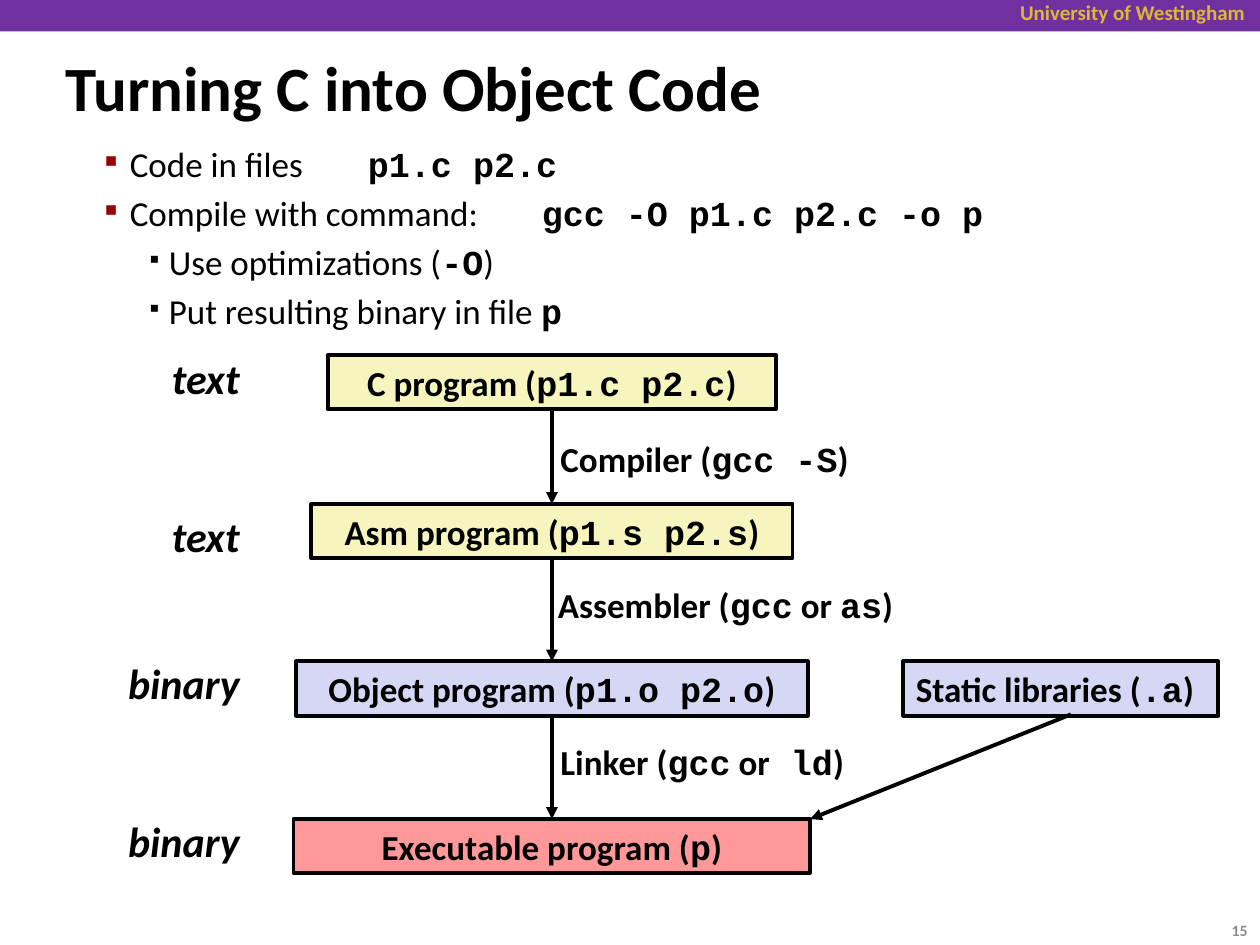
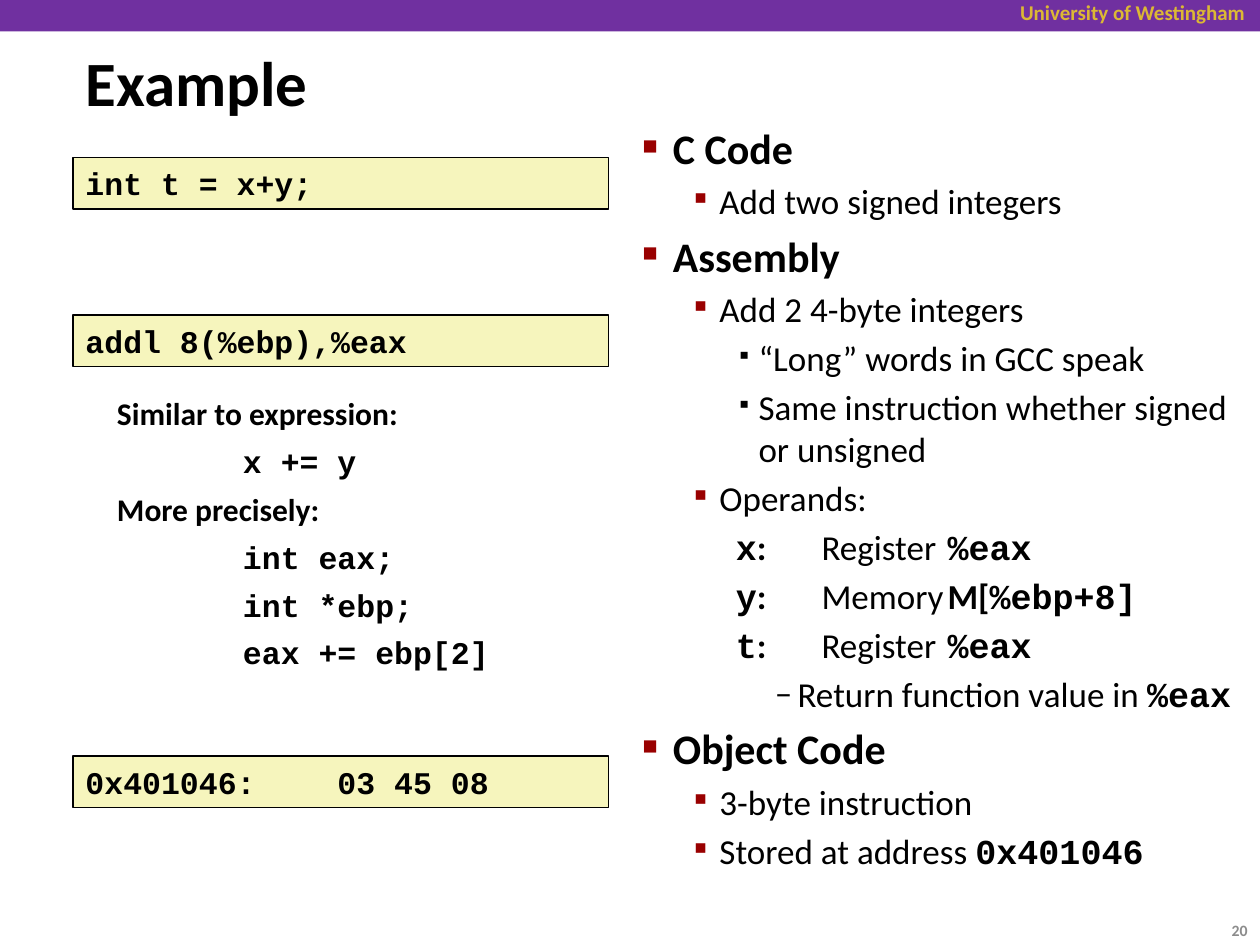
from dataclasses import dataclass

from lxml.etree import SubElement
from pptx import Presentation
from pptx.dml.color import RGBColor
from pptx.enum.shapes import MSO_CONNECTOR, MSO_SHAPE
from pptx.enum.text import MSO_ANCHOR, MSO_AUTO_SIZE, PP_ALIGN
from pptx.oxml.ns import qn
from pptx.util import Emu, Pt

EMU_PER_PX = 9144


@dataclass(frozen=True)
class Theme:
    sans: str = "Calibri"
    mono: str = "Courier New"
    ink: str = "000000"
    band: str = "7030A0"
    gold: str = "DCB834"
    bullet: str = "990000"
    muted: str = "8C8C8C"
    source: str = "F6F5BD"
    binary: str = "D6D6F5"
    executable: str = "FF9999"
    title: int = 36
    heading: int = 24
    text: int = 20
    code: int = 18
    header: int = 12
    number: int = 9


@dataclass(frozen=True)
class Level:
    size: int
    bold: bool
    margin: int
    hanging: int
    mark: str
    mark_color: str
    mark_percent: int
    mark_font: str


@dataclass(frozen=True)
class Span:
    text: str
    font: str
    bold: bool = True


THEME = Theme()
LEVELS = (
    Level(THEME.heading, True, 24, 24, "■", THEME.bullet, 60, THEME.mono),
    Level(THEME.text, False, 61, 24, "▪", THEME.bullet, 110, THEME.mono),
    Level(THEME.text, False, 92, 18, "▪", THEME.ink, 80, THEME.mono),
    Level(THEME.text, False, 123, 18, "–", THEME.ink, 100, THEME.sans),
)


def px(length):
    return Emu(length * EMU_PER_PX)


def rgb(color):
    return RGBColor.from_string(color)


def code(text):
    return Span(text, THEME.mono)


def strong(text):
    return Span(text, THEME.sans)


def write(paragraph, parts, size, bold=True, color=THEME.ink, italic=False, align=PP_ALIGN.LEFT):
    paragraph.alignment = align
    for part in parts:
        span = part if isinstance(part, Span) else Span(part, THEME.sans, bold)
        run = paragraph.add_run()
        run.text = span.text
        font = run.font
        font.name, font.size = span.font, Pt(size)
        font.bold, font.italic = span.bold, italic
        font.color.rgb = rgb(color)


def set_tabs(paragraph, stops):
    tab_list = SubElement(paragraph._p.get_or_add_pPr(), qn("a:tabLst"))
    for stop in stops:
        SubElement(tab_list, qn("a:tab"), pos=str(px(stop)), algn="l")


def set_bullet(paragraph, level, shown):
    properties = paragraph._p.get_or_add_pPr()
    properties.set("marL", str(px(level.margin)))
    properties.set("indent", str(-px(level.hanging)))
    if not shown:
        SubElement(properties, qn("a:buNone"))
        return
    mark_color = SubElement(properties, qn("a:buClr"))
    SubElement(mark_color, qn("a:srgbClr"), val=level.mark_color)
    SubElement(properties, qn("a:buSzPct"), val=str(level.mark_percent * 1000))
    SubElement(properties, qn("a:buFont"), typeface=level.mark_font)
    SubElement(properties, qn("a:buChar"), char=level.mark)


def place(element, left, top, width, height):
    element.left, element.top = px(left), px(top)
    element.width, element.height = px(width), px(height)


def add_label(slide, left, top, width, height, parts, size, **style):
    label = slide.shapes.add_textbox(px(left), px(top), px(width), px(height))
    label.text_frame.word_wrap = True
    write(label.text_frame.paragraphs[0], parts, size, **style)
    return label


def add_box(slide, left, top, width, height, fill, line_width=0):
    box = slide.shapes.add_shape(MSO_SHAPE.RECTANGLE, px(left), px(top), px(width), px(height))
    box.shadow.inherit = False
    box.fill.solid()
    box.fill.fore_color.rgb = rgb(fill)
    if line_width:
        box.line.color.rgb = rgb(THEME.ink)
        box.line.width = Pt(line_width)
    else:
        box.line.fill.background()
    return box


def add_stage(slide, left, top, width, fill, parts, align=PP_ALIGN.CENTER):
    stage = add_box(slide, left, top, width, 43, fill, 2.25)
    write(stage.text_frame.paragraphs[0], parts, THEME.text, align=align)
    return stage


def add_code_box(slide, top, line, tabs=()):
    box = add_box(slide, 58, top, 425, 41, THEME.source, 1)
    paragraph = box.text_frame.paragraphs[0]
    write(paragraph, [code(line)], THEME.code)
    if tabs:
        set_tabs(paragraph, tabs)


def add_arrow(slide, start=(0, 0), end=(0, 0)):
    arrow = slide.shapes.add_connector(
        MSO_CONNECTOR.STRAIGHT, *(px(value) for value in (*start, *end)))
    arrow.line.color.rgb = rgb(THEME.ink)
    arrow.line.width = Pt(2.25)
    SubElement(arrow.line._get_or_add_ln(), qn("a:tailEnd"), type="triangle")
    SubElement(arrow._element.spPr, qn("a:effectLst"))
    return arrow


def link_stages(slide, upper, lower):
    arrow = add_arrow(slide)
    arrow.begin_connect(upper, 2)
    arrow.end_connect(lower, 0)


def fill_outline(outline, items, tabs):
    frame = outline.text_frame
    frame.auto_size = MSO_AUTO_SIZE.NONE
    frame.text = "\n" * (len(items) - 1)
    for paragraph, (depth, parts, *plain) in zip(frame.paragraphs, items):
        level = LEVELS[depth]
        paragraph.level = depth
        paragraph.space_before = Pt(level.size * 0.2)
        write(paragraph, parts, level.size, level.bold)
        set_bullet(paragraph, level, not plain)
        set_tabs(paragraph, tabs)


def start_slide(deck, heading, title_area, number, outline_area, items, tabs):
    slide = deck.slides.add_slide(deck.slide_layouts[1])
    add_box(slide, 0, 0, 1000, 25, THEME.band)
    add_label(slide, 733, -5, 265, 30, ["University of Westingham"], THEME.header,
              color=THEME.gold, align=PP_ALIGN.RIGHT)
    title = slide.shapes.title
    place(title, *title_area)
    title.text_frame.auto_size = MSO_AUTO_SIZE.NONE
    title.text_frame.vertical_anchor = MSO_ANCHOR.MIDDLE
    write(title.text_frame.paragraphs[0], [heading], THEME.title)
    outline = slide.placeholders[1]
    place(outline, *outline_area)
    fill_outline(outline, items, tabs)
    page = add_label(slide, 933, 718, 67, 40, [number], THEME.number,
                     color=THEME.muted, align=PP_ALIGN.RIGHT)
    page.text_frame.vertical_anchor = MSO_ANCHOR.MIDDLE
    return slide


def build_toolchain(deck):
    items = [
        (1, ["Code in files \t", code("p1.c p2.c")]),
        (1, ["Compile with command: \t", code("gcc -O p1.c p2.c -o p")]),
        (2, ["Use optimizations (", code("-O"), ")"]),
        (2, ["Put resulting binary in file ", code("p")]),
    ]
    slide = start_slide(deck, "Turning C into Object Code", (42, 37, 765, 63), "15",
                        (32, 108, 909, 160), items, (250, 388))

    for top, form in ((275, "text"), (400, "text"), (517, "binary"), (642, "binary")):
        add_label(slide, 70, top, 130, 50, [form], THEME.heading,
                  italic=True, align=PP_ALIGN.RIGHT)

    center = 438
    stages = [
        add_stage(slide, center - width // 2, top, width, fill, [f"{name} (", code(files), ")"])
        for top, width, fill, name, files in (
            (282, 356, THEME.source, "C program", "p1.c p2.c"),
            (400, 382, THEME.source, "Asm program", "p1.s p2.s"),
            (525, 406, THEME.binary, "Object program", "p1.o p2.o"),
            (650, 410, THEME.executable, "Executable program", "p"),
        )
    ]
    for upper, lower in zip(stages, stages[1:]):
        link_stages(slide, upper, lower)

    for left, top, tool in (
        (435, 342, ["Compiler (", code("gcc -S"), ")"]),
        (433, 458, ["Assembler (", code("gcc"), " or ", code("as"), ")"]),
        (435, 583, ["Linker (", code("gcc"), " or", code(" ld"), ")"]),
    ):
        add_label(slide, left, top, 333, 43, tool, THEME.text)

    add_stage(slide, 717, 525, 250, THEME.binary,
              ["Static libraries (", code(".a"), ")"], PP_ALIGN.LEFT)
    add_arrow(slide, (850, 567), (643, 650))


def build_example(deck):
    items = [
        (0, ["C Code"]),
        (1, ["Add two signed integers"]),
        (0, ["Assembly"]),
        (1, ["Add 2 4-byte integers"]),
        (2, ["“Long” words in GCC speak"]),
        (2, ["Same instruction whether signed or unsigned"]),
        (1, ["Operands:"]),
        (2, [code("x"), strong(":"), "\tRegister\t", code("%eax")], "plain"),
        (2, [code("y"), strong(":"), "\tMemory\t", strong("M["), code("%ebp+8]")], "plain"),
        (2, [code("t"), strong(":"), "\tRegister\t", code("%eax")], "plain"),
        (3, ["Return function value in ", code("%eax")]),
        (0, ["Object Code"]),
        (1, ["3-byte instruction"]),
        (1, ["Stored at address ", code("0x401046")]),
    ]
    slide = start_slide(deck, "Example", (58, 33, 794, 63), "20",
                        (500, 92, 500, 600), items, (190, 290))

    add_code_box(slide, 125, "int t = x+y;")
    add_code_box(slide, 250, "addl 8(%ebp),%eax")
    add_code_box(slide, 600, "0x401046:\t03 45 08", (200,))

    meaning = add_label(slide, 83, 308, 375, 237, ["Similar to expression:"], THEME.code)
    for part in (code("\tx += y"), "More precisely:", code("\tint eax;"),
                 code("\tint *ebp;"), code("\teax += ebp[2]")):
        paragraph = meaning.text_frame.add_paragraph()
        paragraph.line_spacing = 0.8
        paragraph.space_before = Pt(10)
        write(paragraph, [part], THEME.code)
        set_tabs(paragraph, (100,))


def main():
    deck = Presentation()
    deck.slide_width, deck.slide_height = px(1000), px(750)
    build_toolchain(deck)
    build_example(deck)
    deck.save("out.pptx")


if __name__ == "__main__":
    main()
